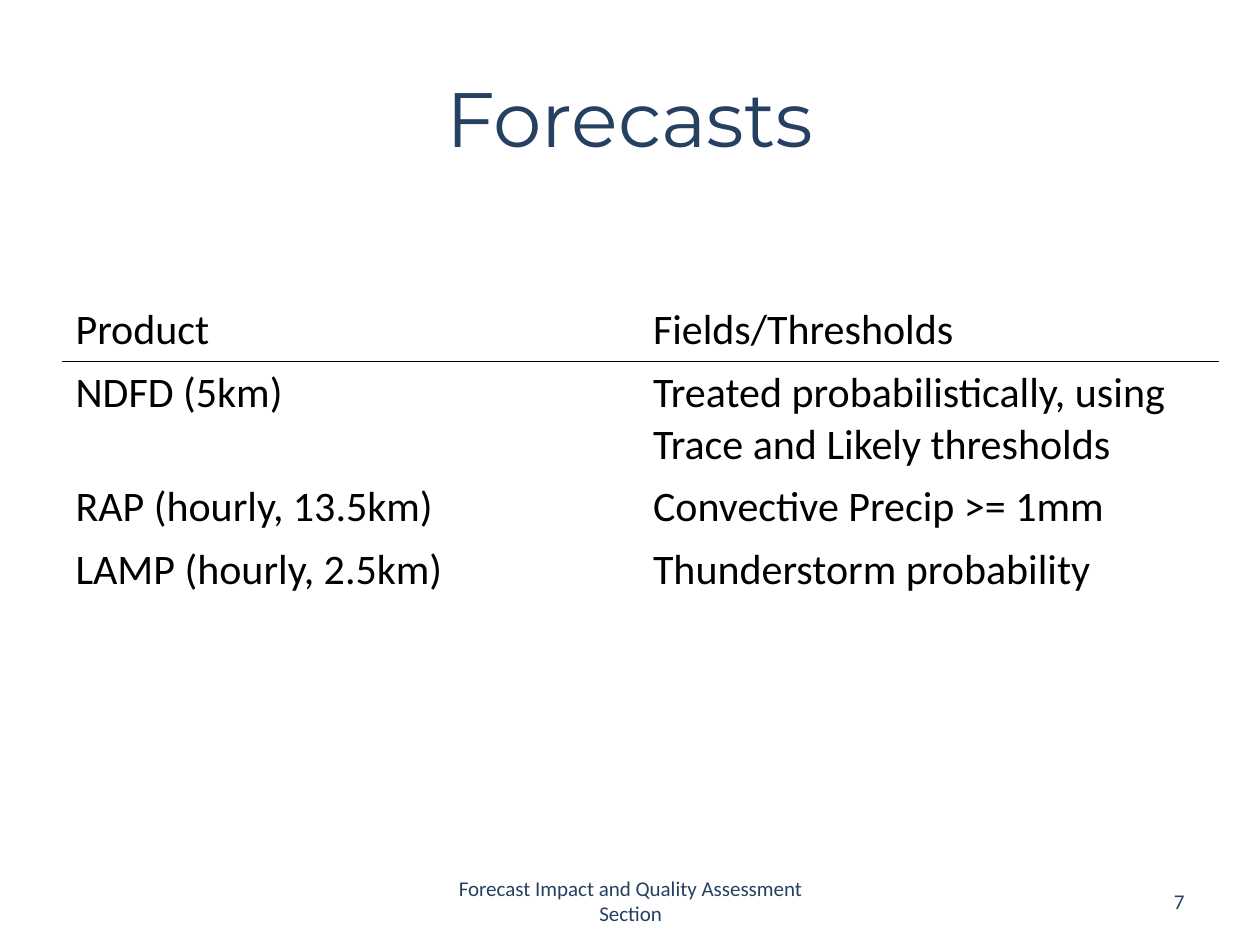
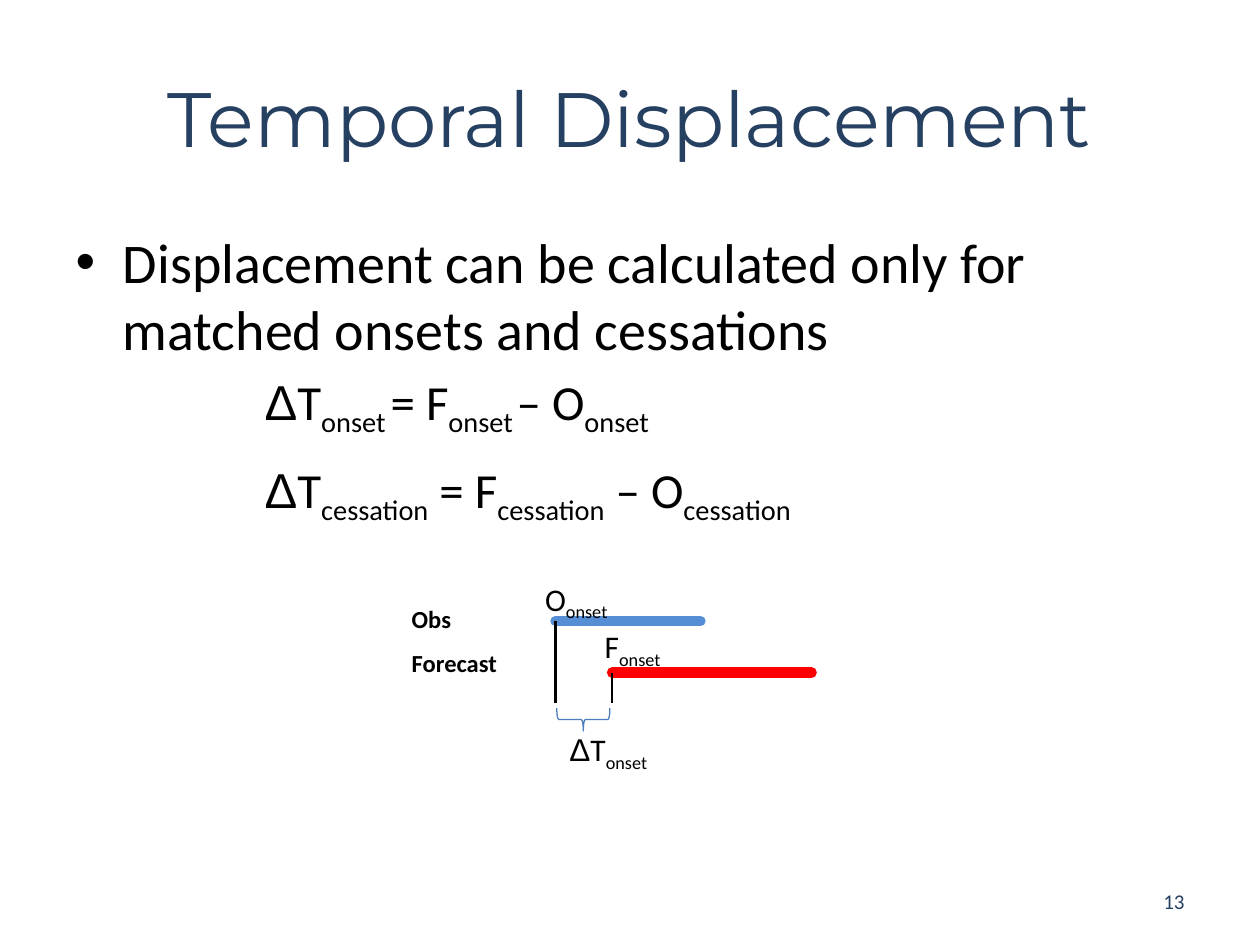
from dataclasses import dataclass

from lxml import etree
from pptx import Presentation
from pptx.dml.color import RGBColor
from pptx.enum import shapes, text
from pptx.oxml import ns
from pptx.util import Cm, Pt


@dataclass(frozen=True)
class Theme:
    navy: RGBColor = RGBColor(0x25, 0x40, 0x61)
    black: RGBColor = RGBColor(0, 0, 0)
    obs: RGBColor = RGBColor(0x55, 0x8E, 0xD5)
    forecast: RGBColor = RGBColor(0xFF, 0, 0)
    brace: RGBColor = RGBColor(0x4B, 0x7E, 0xBC)
    title_font: str = "Montserrat"
    body_font: str = "Calibri"
    symbol_font: str = "Arial"
    title: int = 44
    bullet: int = 32
    formula: int = 28
    table: int = 24
    label: int = 18
    key: int = 14
    footer: int = 12


THEME = Theme()

# Content
FORECASTS = {
    "title": "Forecasts",
    "footer": "Forecast Impact and Quality Assessment Section",
    "number": "7",
    "rows": [
        ("Product", "Fields/Thresholds"),
        ("NDFD (5km)", "Treated probabilistically, using Trace and Likely thresholds"),
        ("RAP (hourly, 13.5km)", "Convective Precip >= 1mm"),
        ("LAMP (hourly, 2.5km)", "Thunderstorm probability"),
    ],
}
DISPLACEMENT = {
    "title": "Temporal Displacement",
    "number": "13",
    "bullet": "Displacement can be calculated only for matched onsets and cessations",
    # subscript, the three symbols, space before in points
    "formulas": [
        ("onset", ("ΔT", "\t= F", "\t– O"), 5.6),
        ("cessation", ("ΔT", " = F", " – O"), 12),
    ],
}
FORMULA_INDENT = Cm(3.81)
FORMULA_TABS = (Cm(7.39), Cm(11.23))

# Timeline, in cm: onset, end and height of each bar
BARS = [
    ("Obs", 11.2, 14.12, 12.52, THEME.obs),
    ("Forecast", 12.34, 16.36, 13.56, THEME.forecast),
]
KEY_LEFT, KEY_TOP, KEY_STEP = 8.05, 12.06, 0.87
TICK_BOTTOM = 14.17
# symbol, left, top, width
ONSET_LABELS = [("ΔT", 11.23, 14.6, 2.1), ("F", 11.94, 12.52, 2.4), ("O", 10.74, 11.56, 2.4)]


# Shared helpers
def style(r, size, color=THEME.black, font=THEME.body_font, bold=None):
    r.font.size, r.font.name, r.font.bold = Pt(size), font, bold
    r.font.color.rgb = color


def add_run(p, words, size, font=THEME.body_font):
    r = p.add_run()
    r.text = words
    style(r, size, font=font)
    return r


def add_term(p, symbol, subscript, size):
    if symbol.startswith("Δ"):
        add_run(p, "Δ", size, THEME.symbol_font)
        symbol = symbol[1:]
    add_run(p, symbol, size)
    r = add_run(p, subscript, size)
    r._r.get_or_add_rPr().set("baseline", "-25000")


def add_box(s, left, top, width, height, words="", wrap=True):
    tf = s.shapes.add_textbox(Cm(left), Cm(top), Cm(width), Cm(height)).text_frame
    tf.word_wrap = wrap
    tf.text = words
    return tf


def add_footer(s, left, width, words, align):
    tf = add_box(s, left, 17.65, width, 1.02, words)
    tf.vertical_anchor = text.MSO_ANCHOR.MIDDLE
    p = tf.paragraphs[0]
    p.alignment = align
    style(p.runs[0], THEME.footer, THEME.navy)


def add_slide(prs, layout, content):
    s = prs.slides.add_slide(prs.slide_layouts.get_by_name(layout))
    sp = s.shapes.title
    sp.left, sp.top, sp.width, sp.height = Cm(1.27), Cm(0.76), Cm(22.86), Cm(3.18)
    tf = sp.text_frame
    tf.text = content["title"]
    tf.auto_size = text.MSO_AUTO_SIZE.NONE
    tf.vertical_anchor = text.MSO_ANCHOR.MIDDLE
    p = tf.paragraphs[0]
    p.alignment = text.PP_ALIGN.CENTER
    style(p.runs[0], THEME.title, THEME.navy, THEME.title_font)
    if "footer" in content:
        add_footer(s, 8.69, 8.05, content["footer"], text.PP_ALIGN.CENTER)
    add_footer(s, 18.21, 5.92, content["number"], text.PP_ALIGN.RIGHT)
    return s


def add_line(s, x1, y1, x2, y2, color, width, cap="flat"):
    line = s.shapes.add_connector(shapes.MSO_CONNECTOR.STRAIGHT, Cm(x1), Cm(y1), Cm(x2), Cm(y2))
    line.line.color.rgb = color
    line.line.width = Pt(width)
    line.line._get_or_add_ln().set("cap", cap)
    etree.SubElement(line._element.spPr, ns.qn("a:effectLst"))


def set_border(cell, side):
    ln = etree.Element(ns.qn(f"a:{side}"), w=str(Pt(1)))
    fill = etree.SubElement(ln, ns.qn("a:solidFill"))
    etree.SubElement(fill, ns.qn("a:srgbClr"), val=str(THEME.black))
    cell._tc.get_or_add_tcPr().insert(0, ln)


# Forecast products table
def build_forecasts(prs):
    s = add_slide(prs, "Title Only", FORECASTS)
    rows = FORECASTS["rows"]
    table = s.shapes.add_table(len(rows), 2, Cm(1.27), Cm(6.02), Cm(23.28), Cm(4.16)).table
    table.first_row = table.horz_banding = False
    for i, row in enumerate(rows):
        for j, words in enumerate(row):
            cell = table.cell(i, j)
            cell.text = words
            style(cell.text_frame.paragraphs[0].runs[0], THEME.table)
            cell.fill.background()
            if i < 2:
                set_border(cell, ("lnB", "lnT")[i])


# Bullet and formulas
def fill_body(sp):
    sp.left, sp.top, sp.width, sp.height = Cm(1.27), Cm(4.45), Cm(22.86), Cm(7.16)
    tf = sp.text_frame
    tf.text = DISPLACEMENT["bullet"]
    tf.auto_size = text.MSO_AUTO_SIZE.NONE
    p = tf.paragraphs[0]
    p.space_before = Pt(0)
    style(p.runs[0], THEME.bullet)
    for subscript, symbols, space in DISPLACEMENT["formulas"]:
        p = tf.add_paragraph()
        p.level = 1
        p.space_before = Pt(space)
        pPr = p._p.get_or_add_pPr()
        pPr.set("marL", "0")
        pPr.set("indent", str(FORMULA_INDENT))
        etree.SubElement(pPr, ns.qn("a:buNone"))
        tabs = etree.SubElement(pPr, ns.qn("a:tabLst"))
        for pos in FORMULA_TABS:
            etree.SubElement(tabs, ns.qn("a:tab"), pos=str(pos), algn="l")
        for symbol in symbols:
            add_term(p, symbol, subscript, THEME.formula)


# Timeline of observed and forecast events
def draw_timeline(s):
    for i, (name, onset, end, y, color) in enumerate(BARS):
        add_line(s, onset, y, end, y, color, 6, "rnd")
        tf = add_box(s, KEY_LEFT, KEY_TOP + i * KEY_STEP, 2.24, 0.86, name, wrap=False)
        style(tf.paragraphs[0].runs[0], THEME.key, bold=True)
    for _, onset, _, y, _ in BARS:
        add_line(s, onset, y, onset, TICK_BOTTOM, THEME.black, 1.5)

    brace = s.shapes.add_shape(shapes.MSO_SHAPE.LEFT_BRACE, Cm(11.53), Cm(13.97), Cm(0.46), Cm(1.07))
    brace.rotation = 270
    brace.shadow.inherit = False
    brace.fill.background()
    brace.line.color.rgb = THEME.brace
    brace.line.width = Pt(0.75)

    for symbol, left, top, width in ONSET_LABELS:
        tf = add_box(s, left, top, width, 1.02)
        add_term(tf.paragraphs[0], symbol, "onset", THEME.label)


def build_displacement(prs):
    s = add_slide(prs, "Title and Content", DISPLACEMENT)
    fill_body(s.placeholders[1])
    draw_timeline(s)


def main():
    prs = Presentation()
    prs.slide_width, prs.slide_height = Cm(25.4), Cm(19.05)
    build_forecasts(prs)
    build_displacement(prs)
    prs.save("out.pptx")


if __name__ == "__main__":
    main()
